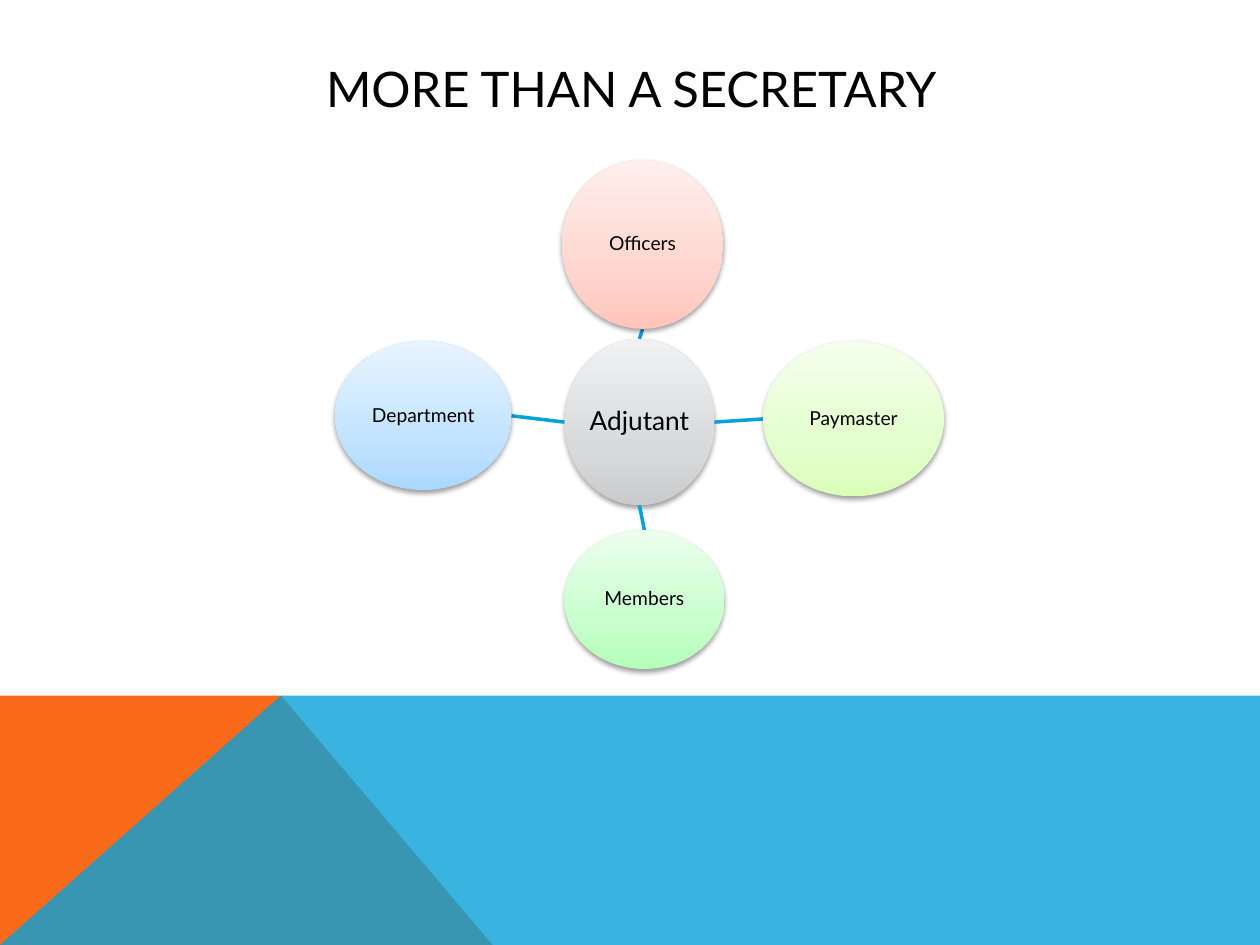
import copy

import lxml.etree
import pptx
import pptx.dml.color
import pptx.enum.shapes
import pptx.enum.text
import pptx.oxml.ns
import pptx.util

INK = {
    "text": "000000",
    "sky": "08A1D9",
    "flame": "F96A1B",
    "grey": ("C9CBCD", "D9DADC", "F0F1F2"),
    "red": ("FFC5BA", "FFD6CF", "FFEFED"),
    "lime": ("DAFFB9", "E4FFCE", "F5FFED"),
    "green": ("B3FFB9", "C9FFCE", "EBFFEC"),
    "blue": ("ABD8FF", "C3E3FF", "E8F4FF"),
}
FONT = "Lato"
STOPS = (0, 0.35, 1)
WIDE, HIGH = 10, 7.5
HUB = ("Adjutant", "grey", 15, (4.48, 2.69, 1.19, 1.32))
RING = {
    "top": ("Officers", "red", 11, (4.46, 1.27, 1.28, 1.34)),
    "right": ("Paymaster", "lime", 11, (6.06, 2.71, 1.43, 1.23)),
    "bottom": ("Members", "green", 11, (4.48, 4.21, 1.27, 1.1)),
    "left": ("Department", "blue", 11, (2.66, 2.71, 1.4, 1.18)),
}
FACING = {"top": "bottom", "bottom": "top", "left": "right", "right": "left"}
SIDES = {"top": (0.5, 0), "right": (1, 0.5), "bottom": (0.5, 1), "left": (0, 0.5)}
FLOOR, PEAK = 5.52, 2.23


def tint(name):
    return pptx.dml.color.RGBColor.from_string(name)


def sub(node, tag, **attrs):
    return lxml.etree.SubElement(node, pptx.oxml.ns.qn(tag), **attrs)


def spot(box, side):
    left, top, width, height = box
    across, down = SIDES[side]
    return left + across * width, top + down * height


class Board:
    def __init__(self, deck):
        self.slide = deck.slides.add_slide(deck.slide_layouts[5])
        self.shapes = self.slide.shapes

    def inch(self, lengths):
        return [pptx.util.Inches(value) for value in lengths]

    def label(self, frame, text, size):
        frame.word_wrap = True
        frame.vertical_anchor = pptx.enum.text.MSO_ANCHOR.MIDDLE
        line = frame.paragraphs[0]
        line.alignment = pptx.enum.text.PP_ALIGN.CENTER
        run = line.add_run()
        run.text = text
        run.font.name = FONT
        run.font.size = pptx.util.Pt(size)
        run.font.color.rgb = tint(INK["text"])
        return line

    def title(self, text, box):
        head = self.shapes.title
        head.left, head.top, head.width, head.height = self.inch(box)
        self.label(head.text_frame, text, 28)

    def patch(self, points, color, alpha=None):
        first, *rest = [self.inch(point) for point in points]
        maker = self.shapes.build_freeform(*first, scale=1.0)
        maker.add_line_segments(rest, close=True)
        shape = maker.convert_to_shape()
        shape.shadow.inherit = False
        shape.line.fill.background()
        shape.fill.solid()
        shape.fill.fore_color.rgb = tint(INK[color])
        if alpha:
            paint = shape.element.spPr.find(".//" + pptx.oxml.ns.qn("a:srgbClr"))
            sub(paint, "a:alpha", val=str(alpha * 1000))

    def shade(self, shape, colors):
        shape.fill.gradient()
        shape.fill.gradient_angle = 90
        stops = shape.element.spPr.find(".//" + pptx.oxml.ns.qn("a:gsLst"))
        stops.append(copy.deepcopy(stops[0]))
        for stop, place, color in zip(shape.fill.gradient_stops, STOPS, colors):
            stop.position = place
            stop.color.rgb = tint(color)

    def drop(self, shape):
        shape.shadow.inherit = False
        effects = shape.element.spPr.find(pptx.oxml.ns.qn("a:effectLst"))
        cast = sub(effects, "a:outerShdw", blurRad=str(pptx.util.Pt(3.1)),
                   dist=str(pptx.util.Pt(1.6)), dir="5400000", rotWithShape="0")
        sub(sub(cast, "a:srgbClr", val="000000"), "a:alpha", val="38000")

    def orb(self, text, color, size, box):
        kind = pptx.enum.shapes.MSO_SHAPE.OVAL
        shape = self.shapes.add_shape(kind, *self.inch(box))
        shape.line.fill.background()
        self.shade(shape, INK[color])
        self.drop(shape)
        frame = shape.text_frame
        frame.margin_left = frame.margin_right = pptx.util.Inches(0.01)
        frame.margin_top = frame.margin_bottom = pptx.util.Inches(0.01)
        self.label(frame, text, size).line_spacing = 0.9

    def link(self, start, end):
        kind = pptx.enum.shapes.MSO_CONNECTOR.STRAIGHT
        line = self.shapes.add_connector(kind, *self.inch(start + end))
        line.line.color.rgb = tint(INK["sky"])
        line.line.width = pptx.util.Pt(2)
        sub(line.element.spPr, "a:effectLst")


def main():
    deck = pptx.Presentation()
    deck.slide_width = pptx.util.Inches(WIDE)
    deck.slide_height = pptx.util.Inches(HIGH)
    board = Board(deck)
    board.patch([(0, HIGH), (0, FLOOR), (PEAK, FLOOR), (3.91, HIGH)], "flame")
    board.patch([(0, HIGH), (PEAK, FLOOR), (WIDE, FLOOR), (WIDE, HIGH)], "sky", 80)
    board.title("MORE THAN A SECRETARY", (0.9, 0.4, 8.22, 0.6))
    board.orb(*HUB)
    for side, orb in RING.items():
        board.link(spot(HUB[-1], side), spot(orb[-1], FACING[side]))
        board.orb(*orb)
    deck.save("out.pptx")


if __name__ == "__main__":
    main()
